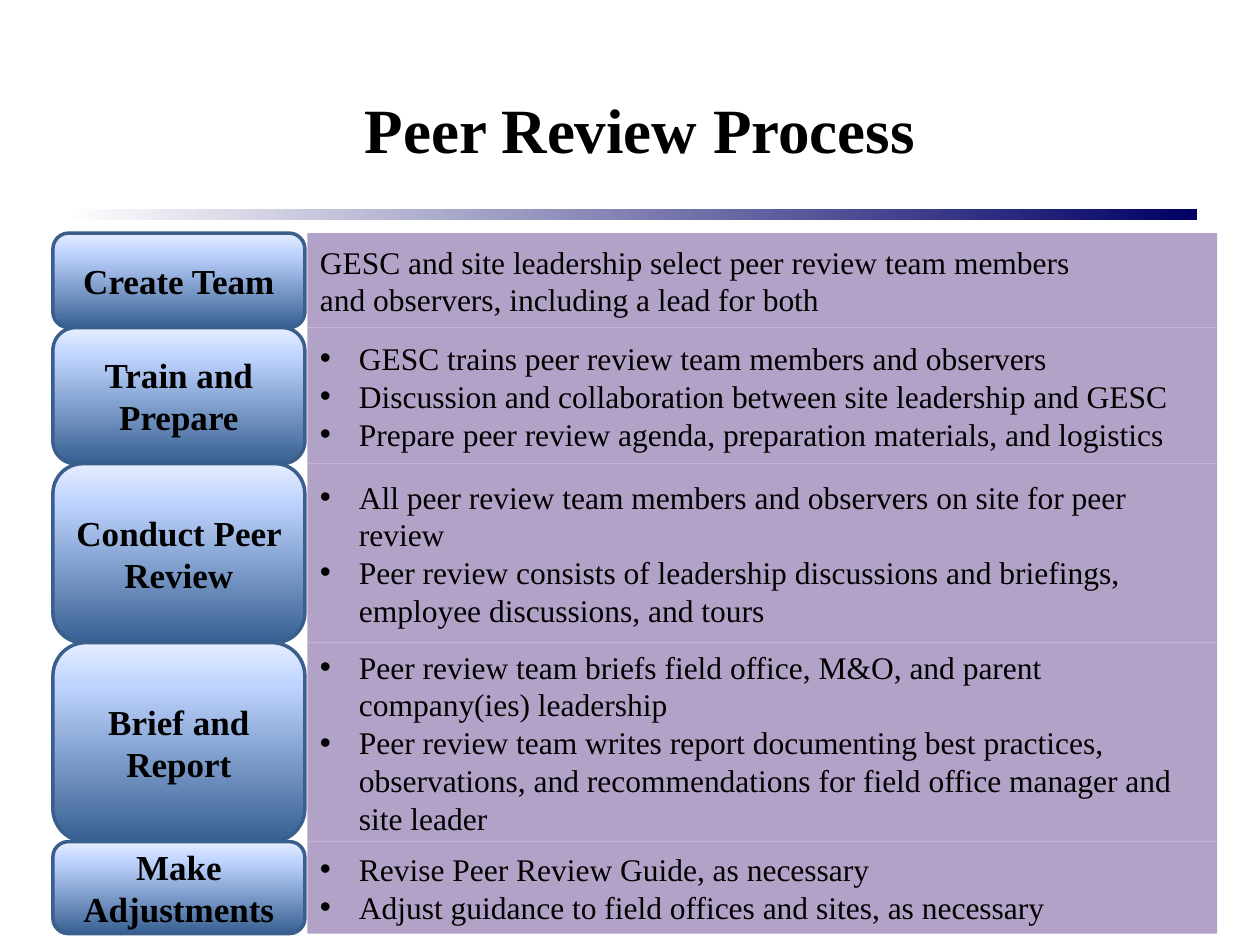
from itertools import pairwise

from lxml.etree import SubElement as Sub
from pptx import Presentation
from pptx.dml.color import RGBColor as Rgb
from pptx.enum.shapes import MSO_SHAPE as Kind
from pptx.enum.text import MSO_ANCHOR as Anchor, PP_ALIGN as Align
from pptx.oxml.ns import qn
from pptx.util import Inches, Pt

TITLE = "Peer Review Process"
STEPS = [
    ("Create Team", False, [
        "GESC and site leadership select peer review team members",
        "and observers, including a lead for both"]),
    ("Train and Prepare", True, [
        "GESC trains peer review team members and observers",
        "Discussion and collaboration between site leadership and GESC",
        "Prepare peer review agenda, preparation materials, and logistics"]),
    ("Conduct Peer Review", True, [
        "All peer review team members and observers on site for peer review",
        "Peer review consists of leadership discussions and briefings, "
        "employee discussions, and tours"]),
    ("Brief and Report", True, [
        "Peer review team briefs field office, M&O, and parent "
        "company(ies) leadership",
        "Peer review team writes report documenting best practices, "
        "observations, and recommendations for field office manager and "
        "site leader"]),
    ("Make Adjustments", True, [
        "Revise Peer Review Guide, as necessary",
        "Adjust guidance to field offices and sites, as necessary"]),
]
EDGES = [1.85, 2.6, 3.68, 5.1, 6.68, 7.41]
LABEL = (0.42, 2.0)
PANEL = (2.44, 7.22)
INDENT = 0.31
FONT = "Times New Roman"
HUES = {"text": "000000", "panel": "B3A2C7", "edge": "3A5F8C"}
RULE = [(0, "FFFFFF"), (100, "000066")]
GLOSS = [(0, "376092"), (79, "BFD4FF"), (100, "E6EEFF")]


def blend(shape, stops, angle):
    shape.fill.gradient()
    shape.fill.gradient_angle = angle
    group = next(shape._element.spPr.iter(qn("a:gsLst")))
    for stop in list(group):
        group.remove(stop)
    for pos, hue in stops:
        stop = Sub(group, qn("a:gs"), pos=str(pos * 1000))
        Sub(stop, qn("a:srgbClr"), val=hue)


def block(slide, kind, box):
    shape = slide.shapes.add_shape(kind, *map(Inches, box))
    shape.shadow.inherit = False
    shape.line.fill.background()
    return shape


def write(shape, lines, size, bold=False, align=Align.LEFT,
          anchor=Anchor.MIDDLE, dots=False):
    frame = shape.text_frame
    frame.word_wrap = True
    frame.vertical_anchor = anchor
    for num, line in enumerate(lines):
        para = frame.add_paragraph() if num else frame.paragraphs[0]
        para.alignment = align
        if dots:
            props = para._p.get_or_add_pPr()
            props.set("marL", str(Inches(INDENT)))
            props.set("indent", str(-Inches(INDENT)))
            Sub(props, qn("a:buFont"), typeface="Arial")
            Sub(props, qn("a:buChar"), char="•")
        run = para.add_run()
        run.text = line
        font = run.font
        font.name, font.size, font.bold = FONT, Pt(size), bold
        font.color.rgb = Rgb.from_string(HUES["text"])


def main():
    deck = Presentation()
    deck.slide_width, deck.slide_height = Inches(10), Inches(7.5)
    slide = deck.slides.add_slide(deck.slide_layouts[6])

    rule = block(slide, Kind.RECTANGLE, (0.5, 1.66, 9, 0.09))
    blend(rule, RULE, 0)
    head = slide.shapes.add_textbox(*map(Inches, (0.58, 0.67, 9, 1.25)))
    write(head, [TITLE], 36, True, Align.CENTER, Anchor.TOP)

    for (name, dots, lines), (top, end) in zip(STEPS, pairwise(EDGES)):
        high = end - top
        label = block(slide, Kind.ROUNDED_RECTANGLE,
                      (LABEL[0], top, LABEL[1], high))
        blend(label, GLOSS, 90)
        label.line.color.rgb = Rgb.from_string(HUES["edge"])
        label.line.width = Pt(2)
        write(label, [name], 20, True, Align.CENTER)

        panel = block(slide, Kind.RECTANGLE, (PANEL[0], top, PANEL[1], high))
        panel.fill.solid()
        panel.fill.fore_color.rgb = Rgb.from_string(HUES["panel"])
        write(panel, lines, 18, dots=dots)

    deck.save("out.pptx")


if __name__ == "__main__":
    main()
